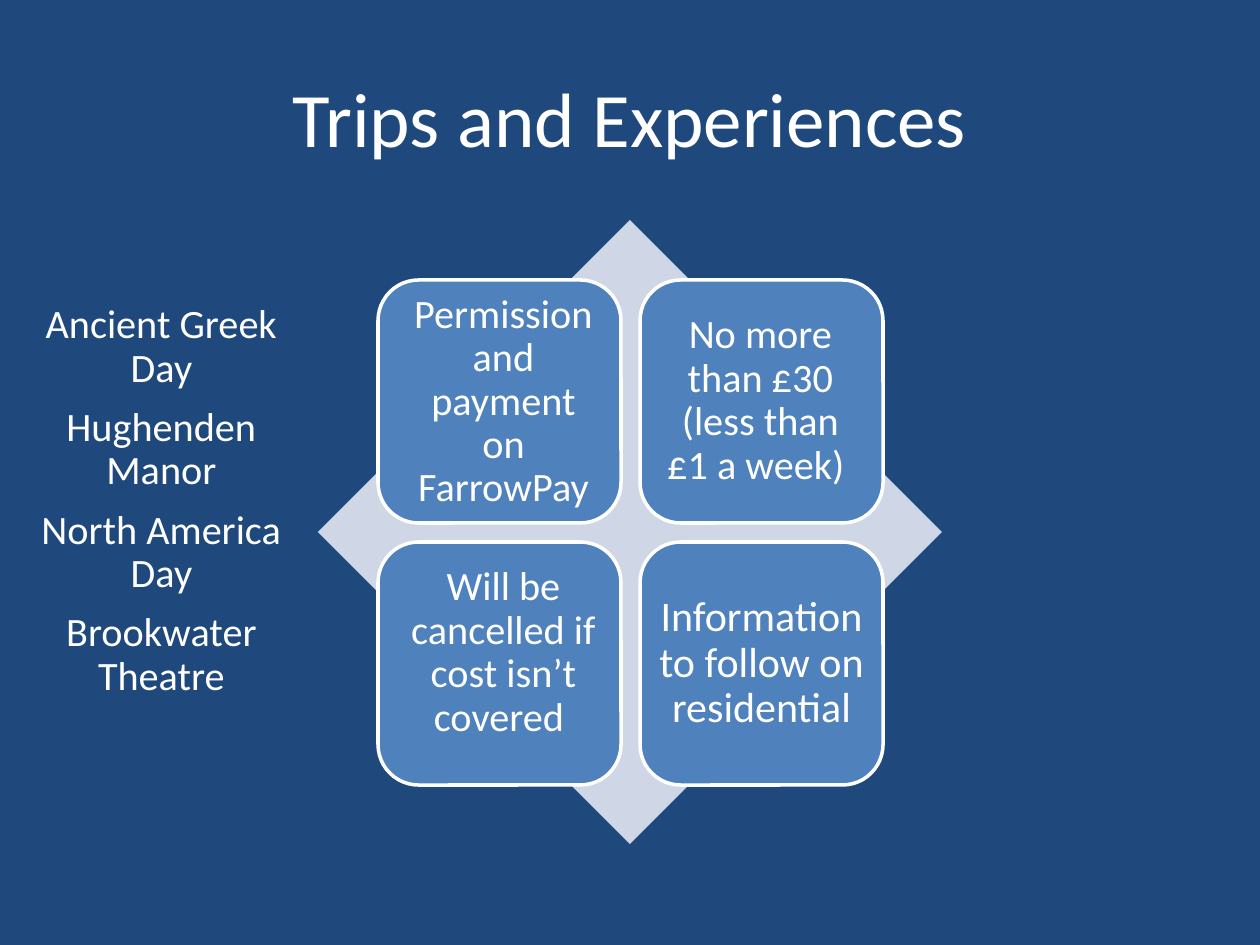
from pptx import Presentation
from pptx.dml.color import RGBColor
from pptx.enum.shapes import MSO_SHAPE
from pptx.enum.text import MSO_ANCHOR, PP_ALIGN
from pptx.util import Pt

SCALE = 914400 / 126  # EMU in one px
NAVY = RGBColor(0x1F, 0x49, 0x7D)
BLUE = RGBColor(0x4F, 0x81, 0xBD)
PALE = RGBColor(0xCF, 0xD7, 0xE7)
WHITE = RGBColor(0xFF, 0xFF, 0xFF)
DIAMOND = MSO_SHAPE.DIAMOND
ROUND = MSO_SHAPE.ROUNDED_RECTANGLE
MIDDLE = MSO_ANCHOR.MIDDLE
CENTER = PP_ALIGN.CENTER


def emu(*sizes):
    return [round(size * SCALE) for size in sizes]


def write(shape, *lines, size=23, gap=9, lead=0.9, inset=12):
    """Fill a shape with centred paragraphs."""
    frame = shape.text_frame
    frame.word_wrap = True
    frame.vertical_anchor = MIDDLE
    pad, = emu(inset)
    frame.margin_left = frame.margin_right = pad
    frame.margin_top = frame.margin_bottom = pad
    for index, line in enumerate(lines):
        para = frame.add_paragraph() if index else frame.paragraphs[0]
        para.alignment = CENTER
        para.line_spacing = lead
        para.space_before = Pt(gap)
        run = para.add_run()
        run.text = line
        run.font.name = "Calibri"
        run.font.size = Pt(size)
        run.font.color.rgb = WHITE


class Deck:
    def __init__(self, width, height, back):
        self.show = Presentation()
        self.show.slide_width, self.show.slide_height = emu(width, height)
        self.slide = self.show.slides.add_slide(self.show.slide_layouts[6])
        fill = self.slide.background.fill
        fill.solid()
        fill.fore_color.rgb = back

    def text(self, box, *lines, **style):
        write(self.slide.shapes.add_textbox(*emu(*box)), *lines, **style)

    def shape(self, kind, box, color):
        shape = self.slide.shapes.add_shape(kind, *emu(*box))
        shape.shadow.inherit = False
        shape.fill.solid()
        shape.fill.fore_color.rgb = color
        shape.line.fill.background()
        return shape

    def tile(self, box):
        tile = self.shape(ROUND, box, BLUE)
        tile.adjustments[0] = 0.167
        tile.line.color.rgb = WHITE
        tile.line.width = Pt(2)
        return tile


def main():
    deck = Deck(1260, 945, NAVY)

    # Title
    deck.text((63, 38, 1134, 158), "Trips and Experiences",
              size=44, gap=0, lead=1, inset=6)

    # Diamond with a two by two grid of tiles
    deck.shape(DIAMOND, (318, 220, 624, 624), PALE)
    side, step = 243, 262
    tiles = [deck.tile((378 + col * step, 280 + row * step, side, side))
             for row in range(2) for col in range(2)]
    write(tiles[3], "Information to follow on residential",
          size=24, gap=13, inset=6)

    # Labels over the other tiles
    labels = [
        ((394, 280, 219, 244), "Permission and payment on FarrowPay"),
        ((651, 301, 219, 200), "No more than £30 (less than £1 a week) "),
        ((394, 553, 219, 200), "Will be cancelled if cost isn’t covered "),
    ]
    for box, label in labels:
        deck.text(box, label)

    # List of trips
    deck.text((21, 290, 281, 423), "Ancient Greek Day", "Hughenden Manor",
              "North America Day", "Brookwater Theatre")

    deck.show.save("out.pptx")


if __name__ == "__main__":
    main()
